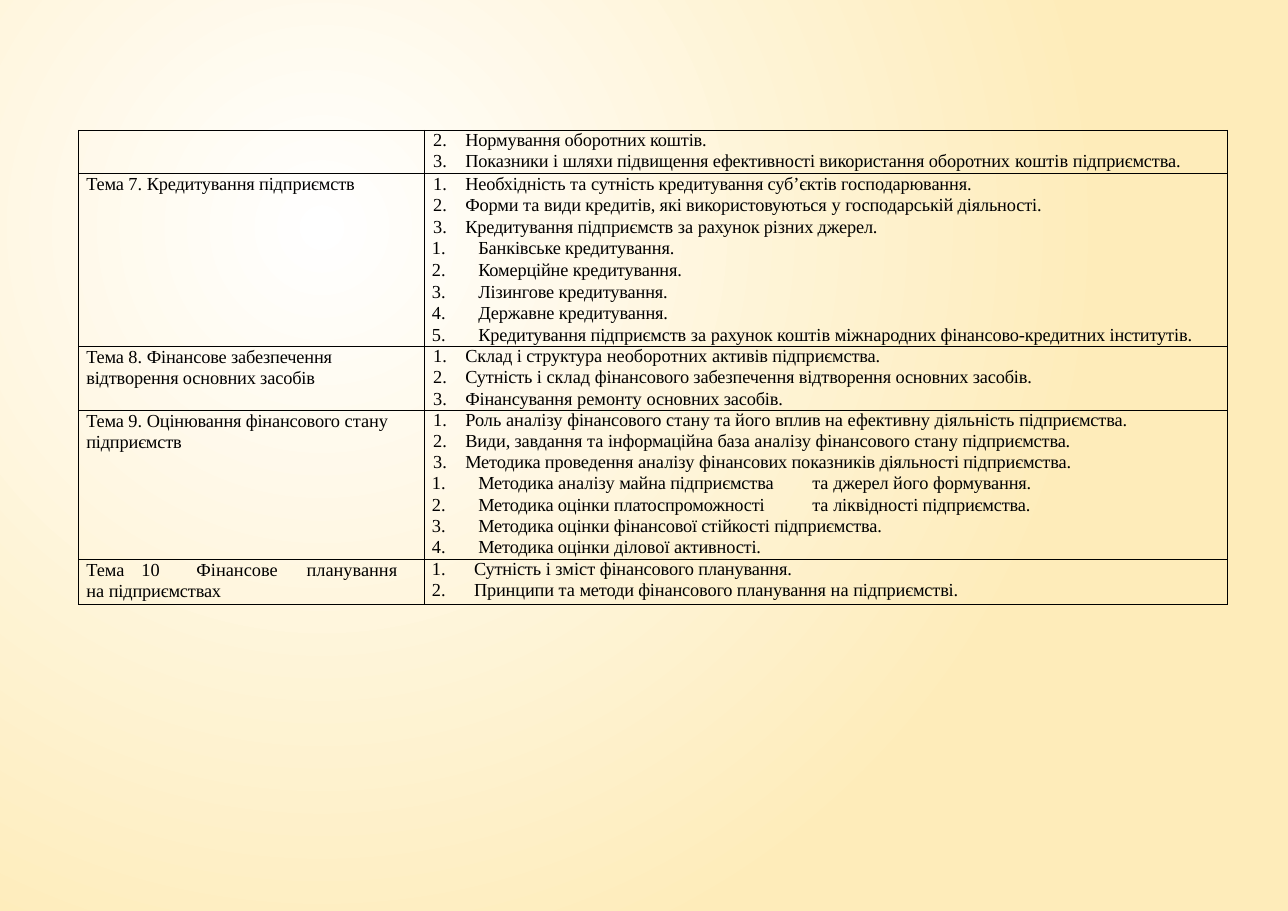
import pptx
import pptx.dml.color
import pptx.oxml.ns
import pptx.util
from lxml import etree

Cm = pptx.util.Cm
Pt = pptx.util.Pt
qn = pptx.oxml.ns.qn

BLACK = pptx.dml.color.RGBColor(0x00, 0x00, 0x00)
WHITE = pptx.dml.color.RGBColor(0xFF, 0xFF, 0xFF)
CREAM = pptx.dml.color.RGBColor(0xFE, 0xEC, 0xBA)
FONT = "Times New Roman"
COLUMN_WIDTHS = (7.98, 18.51)
TOPIC_MARGIN = 0.18
SECOND_TAB = 8.94
TOPIC_TABS = (1.55, 2.46, 4.83, 7.39)

# Indents: outline level, left margin, hanging indent
MAIN = (1, 0.94, -0.74)
SUB = (2, 1.24, -1.07)
WIDE = (1, 1.14, -0.97)

# Rows: height, topic, first number, first and further line spacing, questions
# A bar switches between tight and normal letter spacing
ROWS = (
    (1.0, "", 2, 13.3, 14, (
        (MAIN, "Нормування оборотних коштів."),
        (MAIN, "Показники |і |шляхи підвищення ефективності використання оборотних"
               "| коштів |підприємства."),
    )),
    (3.99, "Тема |7. |Кредитування підприємств", 1, 13.6, 14.1, (
        (MAIN, "Необхідність |та |сутність кредитування суб’єктів господарювання."),
        (MAIN, "Форми |та |види кредитів, які використовуються |у |господарській діяльності."),
        (MAIN, "Кредитування підприємств |за |рахунок різних джерел."),
        (SUB, "Банківське кредитування."),
        (SUB, "Комерційне кредитування."),
        (SUB, "Лізингове кредитування."),
        (SUB, "Державне кредитування."),
        (SUB, "Кредитування підприємств |за |рахунок |коштів "
              "|міжнародних фінансово-кредитних інститутів."),
    )),
    (1.47, "Тема |8. |Фінансове забезпечення відтворення основних засобів", 1, 13.2, 13.8, (
        (MAIN, "Склад |і| структура |необоротних |активів підприємства."),
        (MAIN, "Сутність |і склад |фінансового забезпечення відтворення основних засобів."),
        (MAIN, "Фінансування| ремонту |основних засобів."),
    )),
    (3.43, "Тема |9. |Оцінювання фінансового |стану |підприємств", 1, 13.2, 13.8, (
        (MAIN, "|Роль аналізу |фінансового| стану та його |вплив "
               "|на ефективну діяльність |підприємства."),
        (MAIN, "Види, завдання |та |інформаційна база |аналізу |фінансового |стану "
               "|підприємства."),
        (MAIN, "Методика проведення |аналізу |фінансових показників діяльності підприємства."),
        (SUB, "Методика |аналізу |майна підприємства\t|та |джерел |його |формування."),
        (SUB, "Методика оцінки платоспроможності\t|та |ліквідності підприємства."),
        (SUB, "Методика оцінки фінансової стійкості підприємства."),
        (SUB, "Методика оцінки |ділової| активності."),
    )),
    (1.04, "|Тема\t10\tФінансове\tпланування\tна |підприємствах", 1, 13.2, 14.1, (
        (WIDE, "Сутність| і зміст| фінансового планування."),
        (WIDE, "Принципи |та |методи фінансового планування| на |підприємстві."),
    )),
)


def set_background(slide):
    """Fill the slide with a circular gradient from white to cream."""
    fill = slide.background.fill
    fill.gradient()
    for stop, position, color in zip(fill.gradient_stops, (0, 1), (WHITE, CREAM)):
        stop.position = position
        stop.color.rgb = color
    linear = next(slide.background._cSld.iter(qn("a:lin")))
    circle = etree.Element(qn("a:path"))
    circle.set("path", "circle")
    etree.SubElement(circle, qn("a:fillToRect"), l="50000", t="50000", r="100000", b="100000")
    linear.getparent().replace(linear, circle)


def add_runs(paragraph, text):
    """Add the text in runs of alternating tight and normal letter spacing."""
    for index, part in enumerate(text.split("|")):
        if part:
            run = paragraph.add_run()
            run.text = part
            run.font.name = FONT
            run.font.size = Pt(12)
            run.font.color.rgb = BLACK
            run.font._element.set("spc", "0" if index % 2 else "-10")


def add_tabs(properties, positions):
    """Set left tab stops at the given positions in centimetres."""
    tabs = etree.SubElement(properties, qn("a:tabLst"))
    for position in positions:
        etree.SubElement(tabs, qn("a:tab"), pos=str(Cm(position)), algn="l")


def write_topic(cell, text):
    """Write the name of a topic into its cell."""
    if not text:
        return
    cell.margin_right = Cm(0.25)
    paragraph = cell.text_frame.paragraphs[0]
    paragraph.line_spacing = Pt(13.8)
    properties = paragraph._p.get_or_add_pPr()
    properties.set("marL", str(Cm(TOPIC_MARGIN)))
    properties.set("indent", "0")
    if "\t" in text:
        add_tabs(properties, TOPIC_TABS)
    add_runs(paragraph, text)


def write_questions(cell, questions, start, first_spacing, spacing):
    """Write the numbered questions of a topic into their cell."""
    frame = cell.text_frame
    for index, ((level, margin, indent), text) in enumerate(questions):
        paragraph = frame.add_paragraph() if index else frame.paragraphs[0]
        paragraph.level = level
        paragraph.line_spacing = Pt(spacing if index else first_spacing)
        properties = paragraph._p.get_or_add_pPr()
        properties.set("marL", str(Cm(margin)))
        properties.set("indent", str(Cm(indent)))
        number = etree.SubElement(properties, qn("a:buAutoNum"), type="arabicPeriod")
        if start > 1:
            number.set("startAt", str(start))
        add_tabs(properties, (margin, SECOND_TAB) if "\t" in text else (margin,))
        add_runs(paragraph, text)


def format_cell(cell):
    """Give a cell thin black borders, no fill and no margins."""
    properties = cell._tc.get_or_add_tcPr()
    for side in ("a:lnL", "a:lnR", "a:lnT", "a:lnB"):
        line = etree.SubElement(properties, qn(side), w=str(Pt(0.5)))
        fill = etree.SubElement(line, qn("a:solidFill"))
        etree.SubElement(fill, qn("a:srgbClr"), val=str(BLACK))
    cell.fill.background()
    cell.margin_left = cell.margin_right = cell.margin_top = cell.margin_bottom = 0


def add_topics_table(slide):
    """Add the table of topics and their questions."""
    height = sum(row[0] for row in ROWS)
    table = slide.shapes.add_table(len(ROWS), len(COLUMN_WIDTHS), Cm(1.81), Cm(3),
                                   Cm(sum(COLUMN_WIDTHS)), Cm(height)).table
    table.first_row = table.horz_banding = False
    for column, width in zip(table.columns, COLUMN_WIDTHS):
        column.width = Cm(width)
    for cell in table.iter_cells():
        format_cell(cell)
    for index, (height, topic, start, first_spacing, spacing, questions) in enumerate(ROWS):
        table.rows[index].height = Cm(height)
        write_topic(table.cell(index, 0), topic)
        write_questions(table.cell(index, 1), questions, start, first_spacing, spacing)


def main():
    """Build the slide and save it."""
    presentation = pptx.Presentation()
    presentation.slide_width = Cm(29.7)
    presentation.slide_height = Cm(21)
    slide = presentation.slides.add_slide(presentation.slide_layouts[6])
    set_background(slide)
    add_topics_table(slide)
    presentation.save("out.pptx")


if __name__ == "__main__":
    main()
